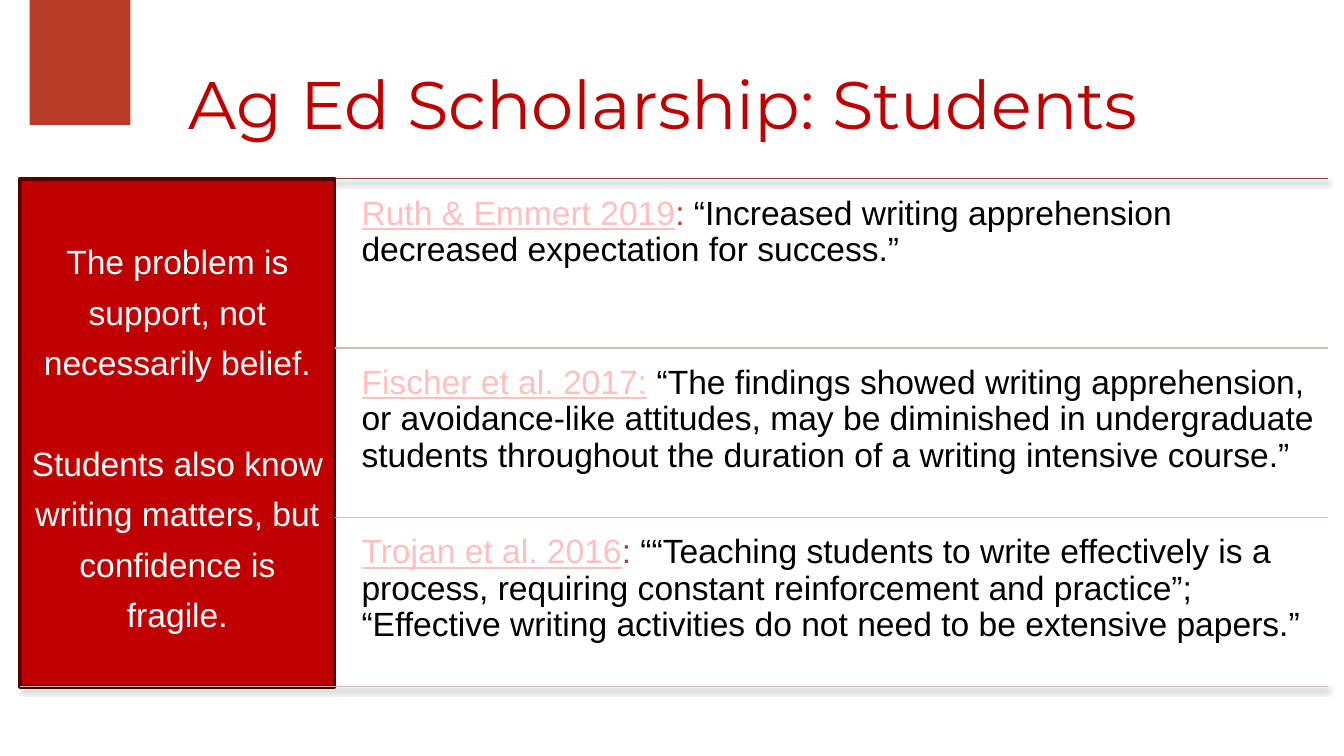
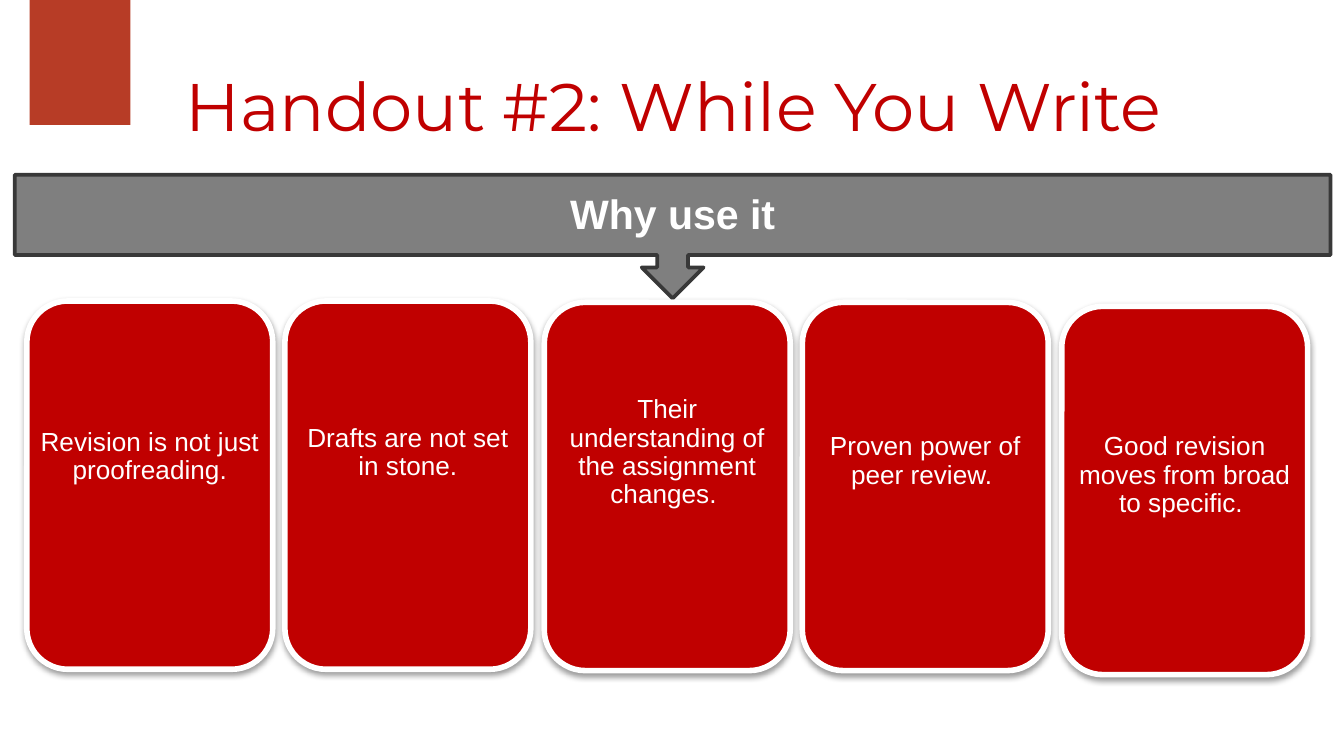
from dataclasses import dataclass

from lxml.etree import SubElement
from pptx import Presentation
from pptx.dml.color import RGBColor
from pptx.enum.shapes import MSO_CONNECTOR, MSO_SHAPE as SHAPE
from pptx.enum.text import MSO_ANCHOR as ANCHOR, PP_ALIGN as ALIGN
from pptx.oxml.ns import qn
from pptx.util import Emu, Pt

PX = 9144  # 100 px to the inch


@dataclass(frozen=True)
class Theme:
    red: str = "C00000"
    dark_red: str = "540000"
    rust: str = "B73C26"
    link: str = "FFBFBF"
    brown: str = "85512E"
    rule: str = "CABFB9"
    gray: str = "7F7F7F"
    dark_gray: str = "383838"
    white: str = "FFFFFF"
    black: str = "000000"
    head_font: str = "Montserrat"
    body_font: str = "Arial"
    title: int = 36
    banner: int = 22
    body: int = 18
    card: int = 14


T = Theme()

QUOTES = [
    ("Ruth & Emmert 2019", ": ",
     "“Increased writing apprehension decreased expectation for success.”"),
    ("Fischer et al. 2017:", " ",
     "“The findings showed writing apprehension, or avoidance-like attitudes, "
     "may be diminished in undergraduate students throughout the duration of "
     "a writing intensive course.”"),
    ("Trojan et al. 2016", ": ",
     "““Teaching students to write effectively is a process, requiring "
     "constant reinforcement and practice”; “Effective writing activities "
     "do not need to be extensive papers.”"),
]
CLAIMS = ["The problem is support, not necessarily belief.",
          "Students also know writing matters, but confidence is fragile."]

# Card text, card top, text offset in the card, text height, anchor
CARDS = [
    ("Revision is not just proofreading.", 224, 90, 53, ANCHOR.TOP),
    ("Drafts are not set in stone.", 224, 87, 53, ANCHOR.TOP),
    ("Their understanding of the assignment changes. ", 225, 65, 95,
     ANCHOR.TOP),
    ("Proven power of peer review. ", 225, 92, 53, ANCHOR.MIDDLE),
    ("Good revision moves from broad to specific. ", 228, 89, 74,
     ANCHOR.MIDDLE),
]


def px(*values):
    return [Emu(v * PX) for v in values]


def rgb(color):
    return RGBColor.from_string(color)


# Drawing helpers
def add_shadow(sp, alpha=38, dist=1.6):
    props = sp._element.spPr
    for old in props.findall(qn("a:effectLst")):
        props.remove(old)
    effects = SubElement(props, qn("a:effectLst"))
    outer = SubElement(effects, qn("a:outerShdw"), blurRad=str(Pt(3.1)),
                       dist=str(Pt(dist)), dir="5400000", rotWithShape="0")
    color = SubElement(outer, qn("a:srgbClr"), val=T.black)
    SubElement(color, qn("a:alpha"), val=str(alpha * 1000))


def add_box(shapes, kind, box, fill, line=None, width=0):
    sp = shapes.add_shape(kind, *px(*box))
    sp.shadow.inherit = False
    sp.fill.solid()
    sp.fill.fore_color.rgb = rgb(fill)
    if line:
        sp.line.color.rgb = rgb(line)
        sp.line.width = Pt(width)
    else:
        sp.line.fill.background()
    return sp


def add_rule(s, x1, x2, y, color, **shadow):
    line = s.shapes.add_connector(MSO_CONNECTOR.STRAIGHT, *px(x1, y, x2, y))
    line.line.color.rgb = rgb(color)
    line.line.width = Pt(0.75)
    add_shadow(line, **shadow)


def set_frame(sp, insets=(10, 5, 10, 5), anchor=ANCHOR.TOP):
    tf = sp.text_frame
    left, top, right, bottom = px(*insets)
    frame_format = {"margin_left": left, "margin_top": top,
                    "margin_right": right, "margin_bottom": bottom,
                    "word_wrap": True, "vertical_anchor": anchor}
    for name, value in frame_format.items():
        setattr(tf, name, value)
    return tf


def write(p, text, size, color, font=T.body_font, **extra):
    r = p.add_run()
    r.text = text
    run_format = {"size": Pt(size), "name": font, **extra}
    for name, value in run_format.items():
        setattr(r.font, name, value)
    r.font.color.rgb = rgb(color)


def set_paragraph(p, **paragraph_format):
    for name, value in paragraph_format.items():
        setattr(p, name, value)
    return p


# Corner block and title, shared by both slides
def add_titled_slide(prs, title, left, top):
    s = prs.slides.add_slide(prs.slide_layouts[6])
    add_box(s.shapes, SHAPE.RECTANGLE, (22, -1, 75, 94), T.rust)
    sp = s.shapes.add_textbox(*px(left, top, 1000, 112))
    tf = set_frame(sp, (112, 7, 68, 15), ANCHOR.MIDDLE)
    p = set_paragraph(tf.paragraphs[0], alignment=ALIGN.CENTER)
    write(p, title, T.title, T.red, T.head_font)
    return s


# Red panel with the claims
def add_claim_panel(s, box):
    sp = add_box(s.shapes, SHAPE.RECTANGLE, box, T.red, T.dark_red, 2)
    tf = set_frame(sp, (7, 7, 7, 7), ANCHOR.MIDDLE)
    for i, claim in enumerate(CLAIMS):
        p = tf.add_paragraph() if i else tf.paragraphs[0]
        set_paragraph(p, alignment=ALIGN.CENTER, line_spacing=1.25)
        if i:
            p.space_before = Pt(27)
        write(p, claim, T.body, T.white)


# One cited quote
def add_quote(s, box, source, mark, quote):
    tf = set_frame(s.shapes.add_textbox(*px(*box)), (7, 7, 7, 7))
    p = set_paragraph(tf.paragraphs[0], line_spacing=0.9)
    write(p, source, T.body, T.link, underline=True)
    write(p, mark, T.body, T.rust)
    write(p, quote, T.body, T.black)


# Claims on the left, ruled quotes on the right
def add_evidence(s, box):
    x, y, w, h = box
    panel, right, step = 234, x + w, h // len(QUOTES)
    add_rule(s, x, right, y, T.brown, alpha=35, dist=1.8)
    add_claim_panel(s, (x, y, panel, h))
    for i, quote in enumerate(QUOTES):
        top = y + i * step
        add_quote(s, (x + 247, top + 6, w - 248, step - 6), *quote)
        last = i == len(QUOTES) - 1
        add_rule(s, x if last else x + panel, right, top + step, T.rule)


# Banner whose arrow points at the cards
def add_banner(s, box, text):
    sp = add_box(s.shapes, SHAPE.DOWN_ARROW_CALLOUT, box, T.gray,
                 T.dark_gray, 2)
    tf = set_frame(sp, (14, 14, 14, 14))
    p = set_paragraph(tf.paragraphs[0], alignment=ALIGN.CENTER,
                      line_spacing=0.9)
    write(p, text, T.banner, T.white, bold=True)


# One rounded card with its label
def add_card(s, box, text, offset, height, anchor):
    x, y, w, _ = box
    shapes = s.shapes.add_group_shape().shapes
    add_shadow(add_box(shapes, SHAPE.ROUNDED_RECTANGLE, box, T.red,
                       T.white, 3))
    tf = set_frame(shapes.add_textbox(*px(x, y + offset, w, height)),
                   anchor=anchor)
    p = set_paragraph(tf.paragraphs[0], alignment=ALIGN.CENTER,
                      line_spacing=0.9)
    write(p, text, T.card, T.white)


def add_cards(s, left, right, w, h):
    step = (right - left - w) / (len(CARDS) - 1)
    for i, (text, top, *label) in enumerate(CARDS):
        add_card(s, (left + int(i * step), top, w, h), text, *label)


def main():
    prs = Presentation()
    prs.slide_width = Emu(1000 * PX)
    prs.slide_height = Emu(prs.slide_width * 9 // 16)

    s = add_titled_slide(prs, "Ag Ed Scholarship: Students ", -22, 24)
    add_evidence(s, (15, 133, 973, 378))

    s = add_titled_slide(prs, "Handout #2: While You Write", -21, 26)
    add_banner(s, (11, 130, 979, 92), "Why use it")
    add_cards(s, 20, 973, 183, 274)

    prs.save("out.pptx")


if __name__ == "__main__":
    main()
